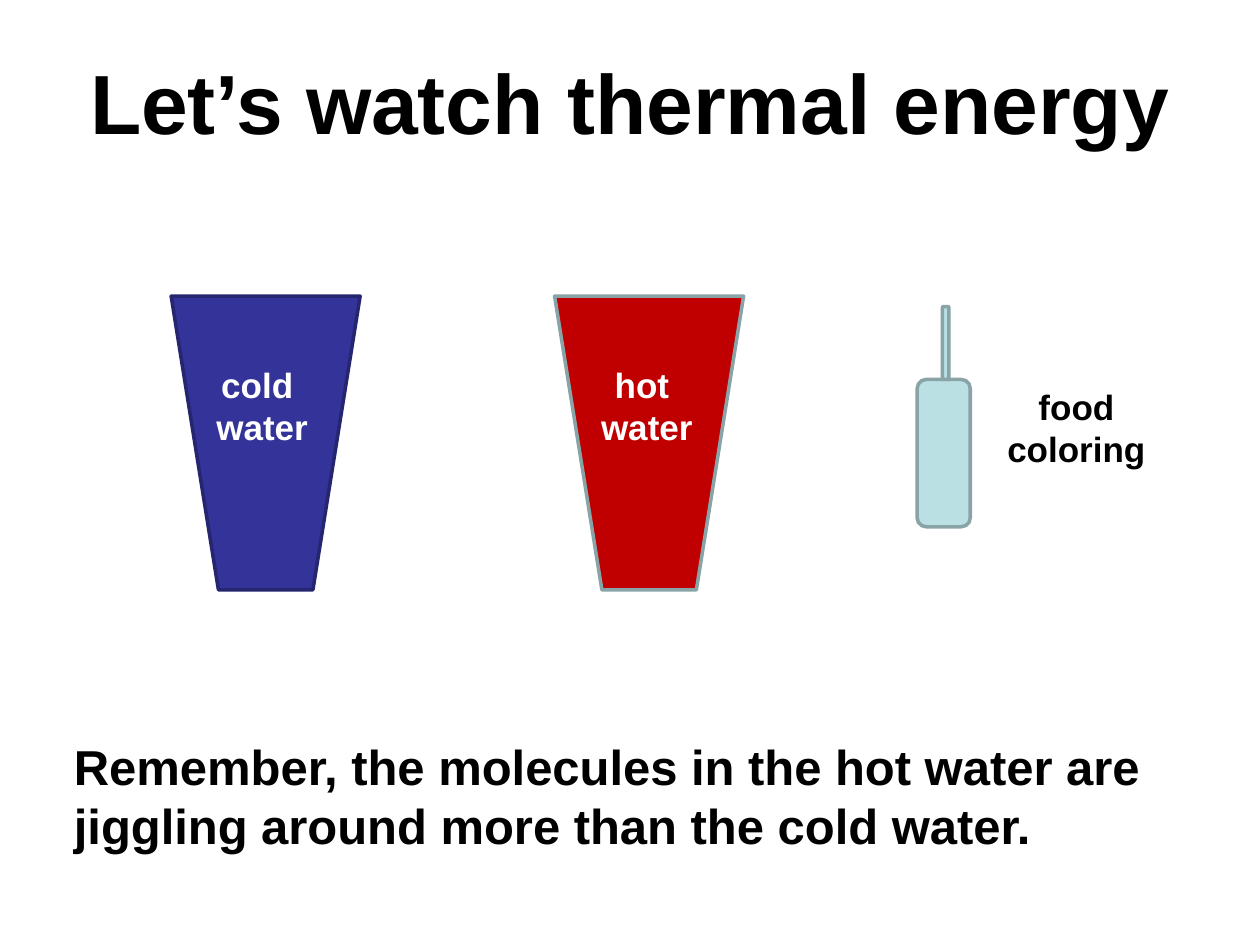
"""Build a slide comparing cold and hot water with food coloring."""
from pptx import Presentation
from pptx.dml.color import RGBColor
from pptx.enum.shapes import MSO_SHAPE
from pptx.enum.text import MSO_ANCHOR, PP_ALIGN
from pptx.util import Cm, Pt

BLACK = RGBColor(0x00, 0x00, 0x00)
WHITE = RGBColor(0xFF, 0xFF, 0xFF)
BLUE = RGBColor(0x33, 0x33, 0x99)
NAVY = RGBColor(0x25, 0x25, 0x70)
RED = RGBColor(0xC0, 0x00, 0x00)
AQUA = RGBColor(0xBB, 0xE0, 0xE3)
GRAY = RGBColor(0x89, 0xA4, 0xA6)

TITLE = "Let’s watch thermal energy"
TITLE_BOX = (1.27, 0.76, 22.86, 3.18)

CUP_TOP, CUP_WIDTH, CUP_HEIGHT = 5.97, 3.81, 5.92
CUPS = [(3.45, BLUE, NAVY), (11.18, RED, GRAY)]

BOTTLE_LEFT, BOTTLE_TOP, BOTTLE_WIDTH, BOTTLE_HEIGHT = 18.49, 7.65, 1.07, 2.97
NOZZLE_WIDTH, NOZZLE_HEIGHT = 0.13, 1.47

TEXTS = [
    ("Remember, the molecules in the hot water are jiggling around more than the cold water.",
     (1.24, 14.73, 22.86, 3.18), 28, BLACK, PP_ALIGN.LEFT),
    ("cold \nwater", (3.81, 7.21, 2.95, 1.8), 20, WHITE, PP_ALIGN.CENTER),
    ("hot \nwater", (11.81, 7.21, 2.46, 1.8), 20, WHITE, PP_ALIGN.CENTER),
    ("food coloring", (19.96, 7.65, 3.48, 1.8), 20, BLACK, PP_ALIGN.CENTER),
]


def write(tf, text, size, color, align):
    tf.text = text
    tf.word_wrap = True
    tf.vertical_anchor = MSO_ANCHOR.TOP
    for p in tf.paragraphs:
        p.alignment = align
        for r in p.runs:
            r.font.name = "Arial"
            r.font.size = Pt(size)
            r.font.bold = True
            r.font.color.rgb = color


def add_part(s, kind, box, fill, line, adjustment):
    sp = s.shapes.add_shape(kind, *map(Cm, box))
    sp.shadow.inherit = False
    sp.adjustments[0] = adjustment
    sp.fill.solid()
    sp.fill.fore_color.rgb = fill
    sp.line.color.rgb = line
    sp.line.width = Pt(2)
    return sp


def main():
    prs = Presentation()
    prs.slide_width, prs.slide_height = Cm(25.4), Cm(19.05)
    s = prs.slides.add_slide(prs.slide_layouts[5])

    title = s.shapes.title
    title.left, title.top, title.width, title.height = map(Cm, TITLE_BOX)
    tf = title.text_frame
    write(tf, TITLE, 48, BLACK, PP_ALIGN.CENTER)
    tf.margin_top = tf.margin_bottom = Cm(0.25)

    for left, fill, line in CUPS:
        cup = add_part(s, MSO_SHAPE.TRAPEZOID, (left, CUP_TOP, CUP_WIDTH, CUP_HEIGHT),
                       fill, line, 0.25)
        cup.rotation = 180

    add_part(s, MSO_SHAPE.ROUNDED_RECTANGLE,
             (BOTTLE_LEFT, BOTTLE_TOP, BOTTLE_WIDTH, BOTTLE_HEIGHT), AQUA, GRAY, 0.17)
    nozzle_left = BOTTLE_LEFT + (BOTTLE_WIDTH - NOZZLE_WIDTH) / 2 + 0.04
    add_part(s, MSO_SHAPE.ROUND_2_SAME_RECTANGLE,
             (nozzle_left, BOTTLE_TOP - NOZZLE_HEIGHT, NOZZLE_WIDTH, NOZZLE_HEIGHT),
             AQUA, GRAY, 0.17)

    for text, box, size, color, align in TEXTS:
        sp = s.shapes.add_textbox(*map(Cm, box))
        write(sp.text_frame, text, size, color, align)

    prs.save("out.pptx")


if __name__ == "__main__":
    main()
